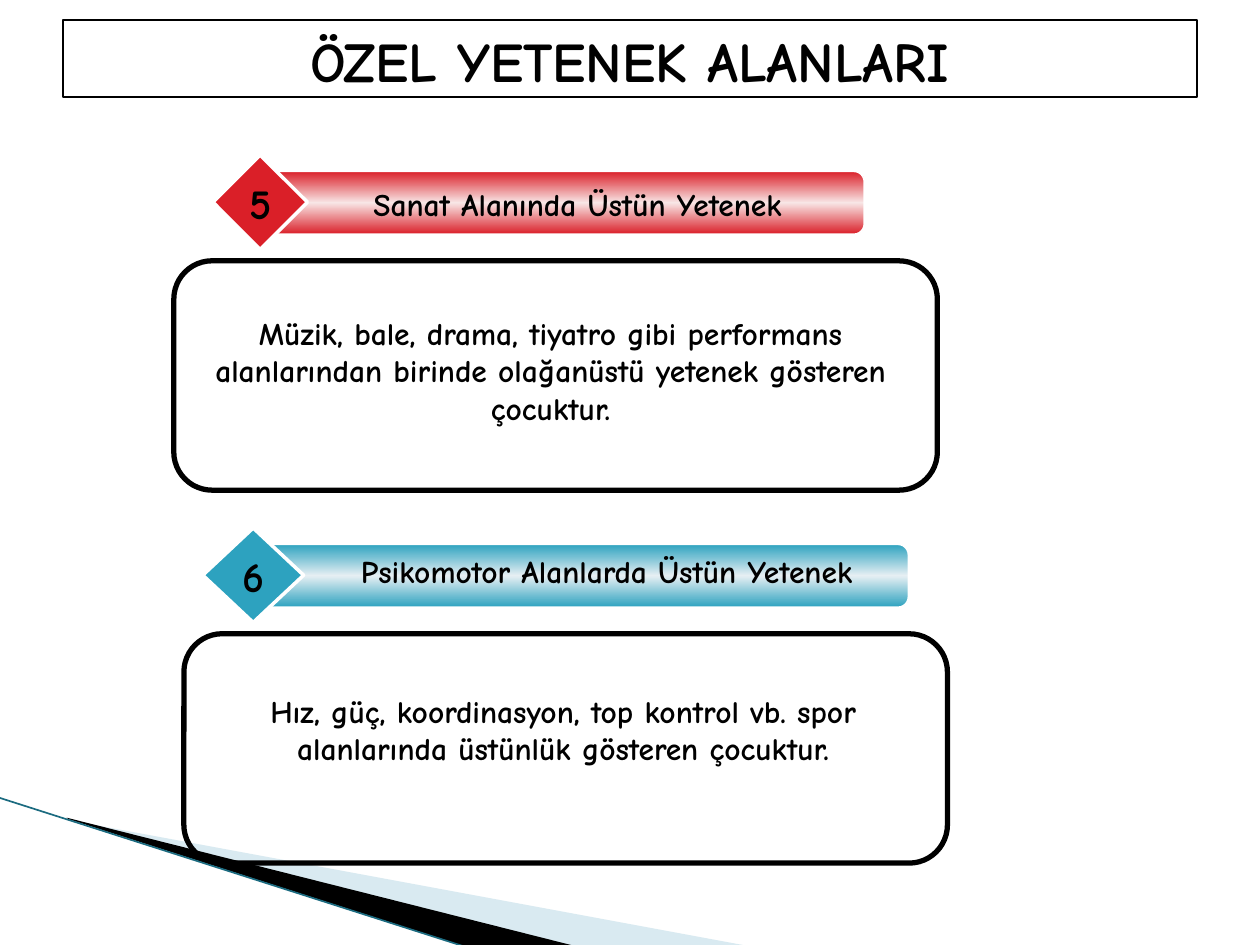
from dataclasses import dataclass

from lxml.etree import SubElement
from pptx import Presentation
from pptx.dml.color import RGBColor
from pptx.enum.shapes import MSO_CONNECTOR, MSO_SHAPE
from pptx.enum.text import MSO_ANCHOR, PP_ALIGN
from pptx.oxml.ns import qn
from pptx.util import Emu, Pt

PX = 9144  # 100 px to the inch


@dataclass(frozen=True)
class Theme:
    font: str = "Comic Neue"
    black: str = "000000"
    white: str = "FFFFFF"
    red: str = "DA1F28"
    red_pale: str = "F8E6E6"
    blue: str = "2DA2BF"
    blue_pale: str = "E6EFF3"
    wedge: str = "A0CBDC"
    edge: str = "1B6B80"
    title_size: int = 32
    number_size: int = 24
    body_size: int = 18


THEME = Theme()


def px(*lengths):
    return [Emu(length * PX) for length in lengths]


def rgb(color):
    return RGBColor.from_string(color)


def paint(shape, fill, line, width=1):
    if fill:
        shape.fill.solid()
        shape.fill.fore_color.rgb = rgb(fill)
    else:
        shape.fill.background()
    if line:
        shape.line.color.rgb = rgb(line)
        shape.line.width = Pt(width)
    else:
        shape.line.fill.background()


def write(shape, text, size, anchor=MSO_ANCHOR.TOP, wrap=True):
    frame = shape.text_frame
    frame.word_wrap = wrap
    frame.vertical_anchor = anchor
    para = frame.paragraphs[0]
    para.alignment = PP_ALIGN.CENTER
    span = para.add_run()
    span.text = text
    span.font.name = THEME.font
    span.font.size = Pt(size)
    span.font.bold = True
    span.font.color.rgb = rgb(THEME.black)


def add_preset(page, kind, place, fill, line, width):
    shape = page.shapes.add_shape(kind, *px(*place))
    shape.shadow.inherit = False
    paint(shape, fill, line, width)
    return shape


def add_label(page, place, text):
    box = page.shapes.add_textbox(*px(*place))
    write(box, text, THEME.body_size)


def shade(shape, outer, middle):
    """Fill with a vertical gradient that is lightest halfway down."""
    shape.fill.gradient()
    shape.fill.gradient_angle = 90
    stops = shape._element.spPr.find(qn("a:gradFill")).find(qn("a:gsLst"))
    for stop in list(stops):
        stops.remove(stop)
    for position, color in ((0, outer), (50, middle), (100, outer)):
        stop = SubElement(stops, qn("a:gs"), pos=str(position * 1000))
        SubElement(stop, qn("a:srgbClr"), val=color)


def add_wedge(page, points, color, opacity=100):
    builder = page.shapes.build_freeform(*points[0], scale=PX)
    builder.add_line_segments(points[1:], close=True)
    wedge = builder.convert_to_shape()
    wedge.shadow.inherit = False
    paint(wedge, color, None)
    if opacity < 100:
        tint = wedge._element.spPr.find(qn("a:solidFill"))[0]
        SubElement(tint, qn("a:alpha"), val=str(opacity * 1000))


def add_corner(page):
    """Draw the swoosh in the bottom left corner."""
    add_wedge(page, [(55, 651), (595, 751), (456, 751), (55, 650)], THEME.wedge, 40)
    add_wedge(page, [(53, 649), (457, 751), (372, 752), (54, 650)], THEME.black)
    edge = page.shapes.add_connector(MSO_CONNECTOR.STRAIGHT, *px(-1, 633, 371, 752))
    edge.line.color.rgb = rgb(THEME.edge)
    edge.line.width = Pt(0.95)
    SubElement(edge._element.spPr, qn("a:effectLst"))


def add_title(page, text):
    title = page.shapes.title
    title.left, title.top, title.width, title.height = px(50, 16, 900, 61)
    paint(title, THEME.white, THEME.black, 0.75)
    write(title, text, THEME.title_size)


def add_heading(page, number, text, bar, diamond, label, colors):
    strip = add_preset(page, MSO_SHAPE.ROUNDED_RECTANGLE, bar, None, THEME.white, 1)
    shade(strip, *colors)
    badge = add_preset(page, MSO_SHAPE.DIAMOND, diamond, colors[0], THEME.white, 2)
    write(badge, number, THEME.number_size, MSO_ANCHOR.MIDDLE, wrap=False)
    add_label(page, label, text)


def add_description(page, frame, label, text):
    add_preset(page, MSO_SHAPE.ROUNDED_RECTANGLE, frame, None, THEME.black, 3)
    add_label(page, label, text)


def main():
    deck = Presentation()
    deck.slide_width, deck.slide_height = px(1000, 750)
    page = deck.slides.add_slide(deck.slide_layouts[5])

    add_corner(page)
    add_title(page, "ÖZEL YETENEK ALANLARI")

    add_heading(page, "5", "Sanat Alanında Üstün Yetenek",
                bar=(211, 136, 475, 50), diamond=(169, 123, 75, 75),
                label=(236, 142, 445, 40), colors=(THEME.red, THEME.red_pale))
    add_description(page, (138, 207, 606, 182), (159, 244, 556, 100),
                    "Müzik, bale, drama, tiyatro gibi performans alanlarından "
                    "birinde olağanüstü yetenek gösteren çocuktur.")

    add_heading(page, "6", "Psikomotor Alanlarda Üstün Yetenek",
                bar=(206, 432, 515, 50), diamond=(161, 419, 80, 75),
                label=(227, 433, 509, 40), colors=(THEME.blue, THEME.blue_pale))
    add_description(page, (146, 503, 606, 182), (169, 544, 556, 70),
                    "Hız, güç, koordinasyon, top kontrol vb. spor alanlarında "
                    "üstünlük gösteren çocuktur.")

    deck.save("out.pptx")


if __name__ == "__main__":
    main()
